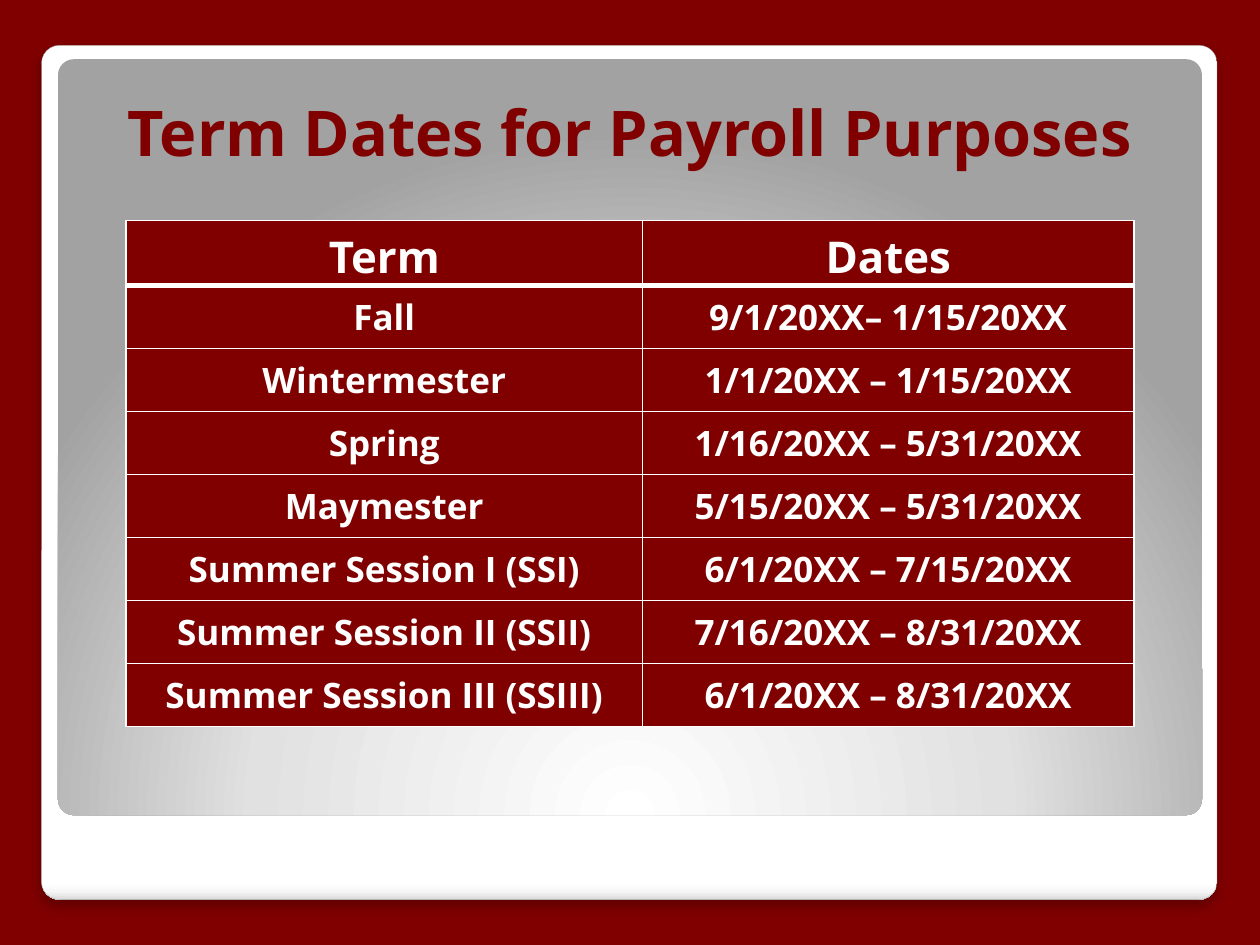
from lxml.etree import SubElement as Sub
from pptx import Presentation
from pptx.dml.color import RGBColor
from pptx.enum.shapes import MSO_SHAPE as Shape
from pptx.enum.text import MSO_ANCHOR as Anchor, PP_ALIGN as Align
from pptx.oxml import parse_xml
from pptx.oxml.ns import nsdecls, qn
from pptx.util import Inches, Pt

TITLE = "Term Dates for Payroll Purposes"
ROWS = [
    ("Term", "Dates"),
    ("Fall", "9/1/20XX– 1/15/20XX"),
    ("Wintermester", "1/1/20XX – 1/15/20XX"),
    ("Spring", "1/16/20XX – 5/31/20XX"),
    ("Maymester", "5/15/20XX – 5/31/20XX"),
    ("Summer Session I (SSI)", "6/1/20XX – 7/15/20XX"),
    ("Summer Session II (SSII)", "7/16/20XX – 8/31/20XX"),
    ("Summer Session III (SSIII)", "6/1/20XX – 8/31/20XX"),
]
WIDTHS = (4.1, 3.9)
ROW_H = 0.5
FONT = "Open Sans"
MAROON = RGBColor(0x80, 0x00, 0x00)
WHITE = RGBColor(0xFF, 0xFF, 0xFF)
GRAY = RGBColor(0xA4, 0xA4, 0xA4)
FRAME = [(0, "FFFFFF"), (98, "FFFFFF"), (99, "F7F7F7"), (100, "DADADA")]
PANEL = [(0, "FFFFFF"), (55, "E1E1E1"), (100, "A2A2A2")]
DOWN = '<a:lin ang="5400000" scaled="0"/>'
GLOW = ('<a:path path="circle"><a:fillToRect l="50000" t="175000" '
        'r="50000" b="-75000"/></a:path>')
SHADOW = (f'<a:effectLst {nsdecls("a")}><a:outerShdw blurRad="{Pt(6)}" '
          f'dist="{Pt(4)}" dir="5400000" algn="t" rotWithShape="0">'
          '<a:srgbClr val="000000"><a:alpha val="25000"/></a:srgbClr>'
          '</a:outerShdw></a:effectLst>')


def add_card(slide, box, stops, way):
    card = slide.shapes.add_shape(Shape.ROUNDED_RECTANGLE, *map(Inches, box))
    card.adjustments[0] = 0.021
    card.shadow.inherit = False
    card.line.fill.background()
    marks = "".join(f'<a:gs pos="{pos * 1000}"><a:srgbClr val="{tint}"/></a:gs>'
                    for pos, tint in stops)
    card.fill.background()
    props = card._element.spPr
    props.replace(props.find(qn("a:noFill")), parse_xml(
        f'<a:gradFill {nsdecls("a")} rotWithShape="1">'
        f'<a:gsLst>{marks}</a:gsLst>{way}</a:gradFill>'))
    return card


def set_text(frame, text, size, color):
    par = frame.paragraphs[0]
    par.text = text
    par.alignment = Align.CENTER
    font = par.font
    font.name, font.size, font.bold = FONT, Pt(size), True
    font.color.rgb = color


def set_edges(cell, base):
    props = cell._tc.get_or_add_tcPr()
    for spot, (side, width) in enumerate(
            [("L", 1), ("R", 1), ("T", 1), ("B", base)]):
        edge = props.makeelement(qn(f"a:ln{side}"), {"w": str(Pt(width))})
        fill = Sub(edge, qn("a:solidFill"))
        Sub(fill, qn("a:srgbClr"), val=str(WHITE))
        props.insert(spot, edge)


def add_terms(slide):
    table = slide.shapes.add_table(
        len(ROWS), len(WIDTHS), Inches(1), Inches(1.75),
        Inches(sum(WIDTHS)), Inches(ROW_H * len(ROWS))).table
    for col, width in zip(table.columns, WIDTHS):
        col.width = Inches(width)
    for i, row in enumerate(ROWS):
        table.rows[i].height = Inches(ROW_H)
        for j, text in enumerate(row):
            cell = table.cell(i, j)
            cell.fill.solid()
            cell.fill.fore_color.rgb = MAROON
            cell.vertical_anchor = Anchor.MIDDLE if i else Anchor.TOP
            set_text(cell.text_frame, text, 20 if i else 25, WHITE)
            set_edges(cell, 1 if i else 3)
            if i == 1:
                cell._tc.tcPr.find(qn("a:lnT")).set("w", str(Pt(3)))


def main():
    deck = Presentation()
    deck.slide_width, deck.slide_height = Inches(10), Inches(7.5)
    slide = deck.slides.add_slide(deck.slide_layouts[6])
    back = slide.background.fill
    back.solid()
    back.fore_color.rgb = MAROON

    frame = add_card(slide, (0.33, 0.36, 9.33, 6.78), FRAME, DOWN)
    frame.line.color.rgb = GRAY
    frame.line.width = Pt(0.16)
    props = frame._element.spPr
    props.replace(props.find(qn("a:effectLst")), parse_xml(SHADOW))
    add_card(slide, (0.46, 0.47, 9.08, 6), PANEL, GLOW)

    title = slide.shapes.add_textbox(
        Inches(0.5), Inches(0.42), Inches(9), Inches(0.92)).text_frame
    title.word_wrap = True
    title.vertical_anchor = Anchor.BOTTOM
    title.margin_bottom = 0
    set_text(title, TITLE, 36, MAROON)
    add_terms(slide)
    deck.save("out.pptx")


if __name__ == "__main__":
    main()
